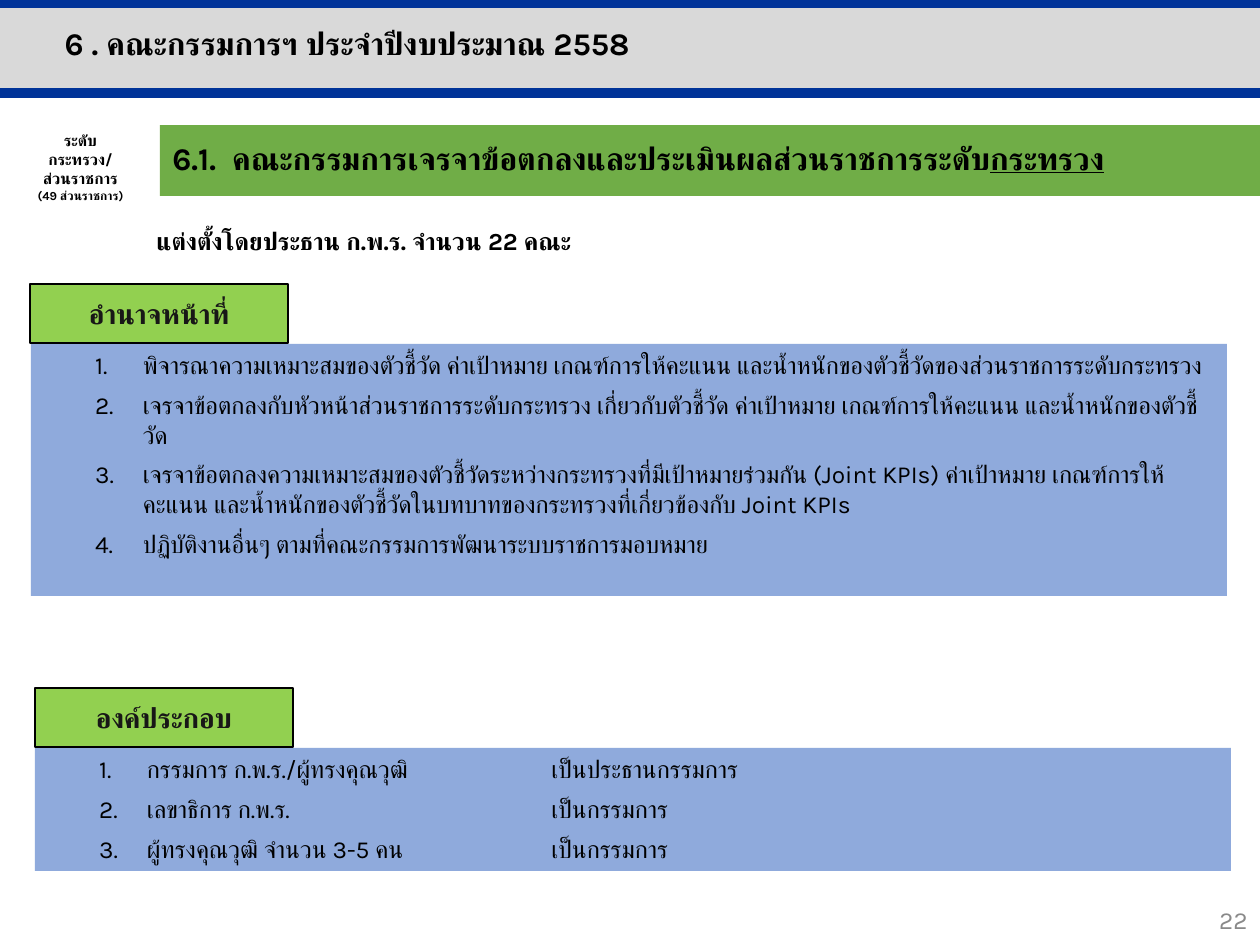
from lxml import etree
from pptx import Presentation
from pptx import util as u
from pptx.dml.color import RGBColor
from pptx.enum import shapes, text
from pptx.oxml.ns import qn

# Content
TITLE = "6 . คณะกรรมการฯ ประจำปีงบประมาณ 2558"
HEADING = "6.1.  คณะกรรมการเจรจาข้อตกลงและประเมินผลส่วนราชการระดับ"
HEADING_UNDERLINED = "กระทรวง"
LEVEL_LINES = ["ระดับ", "กระทรวง/", "ส่วนราชการ", "(49 ส่วนราชการ)"]
APPOINTED = "แต่งตั้งโดยประธาน ก.พ.ร. จำนวน 22 คณะ"
PAGE_NUMBER = "22"
DUTIES = [
    "พิจารณาความเหมาะสมของตัวชี้วัด ค่าเป้าหมาย เกณฑ์การให้คะแนน และน้ำหนักของตัวชี้วัดของส่วนราชการระดับกระทรวง",
    "เจรจาข้อตกลงกับหัวหน้าส่วนราชการระดับกระทรวง เกี่ยวกับตัวชี้วัด ค่าเป้าหมาย เกณฑ์การให้คะแนน และน้ำหนักของตัวชี้วัด",
    "เจรจาข้อตกลงความเหมาะสมของตัวชี้วัดระหว่างกระทรวงที่มีเป้าหมายร่วมกัน (Joint KPIs) ค่าเป้าหมาย "
    "เกณฑ์การให้คะแนน และน้ำหนักของตัวชี้วัดในบทบาทของกระทรวงที่เกี่ยวข้องกับ Joint KPIs",
    "ปฏิบัติงานอื่นๆ ตามที่คณะกรรมการพัฒนาระบบราชการมอบหมาย",
]
MEMBERS = [  # member, tabs, role
    ("กรรมการ ก.พ.ร./ผู้ทรงคุณวุฒิ", 3, "เป็นประธานกรรมการ"),
    ("เลขาธิการ ก.พ.ร.", 5, "เป็นกรรมการ"),
    ("ผู้ทรงคุณวุฒิ จำนวน 3-5 คน", 3, "เป็นกรรมการ"),
]
MEMBER_LINES = [name + "\t" * tabs + role for name, tabs, role in MEMBERS]
SECTIONS = [  # label, label position, panel position, panel height, items
    ("องค์ประกอบ", (35, 688), (35, 748), 123, MEMBER_LINES),
    ("อำนาจหน้าที่", (30, 284), (31, 344), 252, DUTIES),
]

# Style
FONT = "Karla"
BLACK = RGBColor(0x00, 0x00, 0x00)
INK = RGBColor(0x18, 0x17, 0x17)
GREY = RGBColor(0x89, 0x89, 0x89)
BAND = RGBColor(0xD9, 0xD9, 0xD9)
NAVY = RGBColor(0x00, 0x33, 0x99)
GREEN = RGBColor(0x70, 0xAD, 0x47)
LIME = RGBColor(0x92, 0xD0, 0x50)
BLUE = RGBColor(0x8F, 0xAA, 0xDC)
PX = u.Inches(1) / 126
LABEL_SIZE = (258, 59)
PANEL_WIDTH = 1196
LEFT, CENTER, RIGHT = text.PP_ALIGN.LEFT, text.PP_ALIGN.CENTER, text.PP_ALIGN.RIGHT
TOP, MIDDLE = text.MSO_ANCHOR.TOP, text.MSO_ANCHOR.MIDDLE


def px(*lengths):
    return [round(length * PX) for length in lengths]


def add_panel(page, place, fill, outline=None):
    box = page.shapes.add_shape(shapes.MSO_SHAPE.RECTANGLE, *px(*place))
    box.shadow.inherit = False
    box.fill.solid()
    box.fill.fore_color.rgb = fill
    if outline is None:
        box.line.fill.background()
    else:
        box.line.color.rgb = outline
        box.line.width = u.Pt(0.75)
    return box


def add_rule(page, y):
    rule = page.shapes.add_connector(shapes.MSO_CONNECTOR.STRAIGHT, *px(0, y, 1260, y))
    rule.line.color.rgb = NAVY
    rule.line.width = u.Pt(6)
    etree.SubElement(rule._element.spPr, qn("a:effectLst"))


def style_span(span, size, color, bold):
    span.font.size = u.Pt(size)
    span.font.name = FONT
    span.font.bold = bold
    span.font.color.rgb = color
    # Thai letters take the complex-script font
    etree.SubElement(span._r.get_or_add_rPr(), qn("a:cs"), typeface=FONT)


def write(box, lines, size, color=BLACK, bold=True, align=LEFT, anchor=MIDDLE):
    frame = box.text_frame
    frame.word_wrap = True
    frame.auto_size = text.MSO_AUTO_SIZE.NONE
    frame.vertical_anchor = anchor
    frame.text = "\n".join(lines)
    for para in frame.paragraphs:
        para.alignment = align
        for span in para.runs:
            style_span(span, size, color, bold)
    return frame


def number(frame):
    for index, para in enumerate(frame.paragraphs):
        props = para._p.get_or_add_pPr()
        props.set("marL", str(u.Inches(0.79)))
        props.set("indent", str(u.Inches(-0.38)))
        etree.SubElement(props, qn("a:buFont"), typeface="Arial")
        etree.SubElement(props, qn("a:buAutoNum"), type="arabicPeriod")
        if index:
            para.space_before = u.Pt(6)


def add_text(page, place, lines, size, **style):
    return write(page.shapes.add_textbox(*px(*place)), lines, size, **style)


def main():
    deck = Presentation()
    deck.slide_width, deck.slide_height = u.Inches(10), u.Inches(7.5)
    page = deck.slides.add_slide(deck.slide_layouts[5])

    # Title band
    add_panel(page, (0, 6, 1260, 86), BAND)
    for y in (93, 3):
        add_rule(page, y)
    title = page.shapes.title
    title.left, title.top, title.width, title.height = px(52, 18, 1153, 50)
    write(title, [TITLE], 18)
    page.shapes._spTree.append(title._element)  # in front of the band

    # Heading bar
    bar = add_panel(page, (160, 125, 1100, 71), GREEN)
    para = write(bar, [HEADING], 18).paragraphs[0]
    para.line_spacing = 0.9
    span = para.add_run()
    span.text = HEADING_UNDERLINED
    style_span(span, 18, BLACK, True)
    span.font.underline = True

    # Level note and appointment line
    level = add_text(page, (18, 125, 125, 87), LEVEL_LINES, 9, align=CENTER, anchor=TOP)
    level.paragraphs[-1].runs[0].font.size = u.Pt(7)
    add_text(page, (144, 220, 1116, 43), [APPOINTED], 14, anchor=TOP)

    # Numbered panels with their labels
    for label, label_at, panel_at, height, items in SECTIONS:
        panel = add_panel(page, (*panel_at, PANEL_WIDTH, height), BLUE)
        number(write(panel, items, 14, bold=False, anchor=TOP))
        tag = add_panel(page, (*label_at, *LABEL_SIZE), LIME, BLACK)
        write(tag, [label], 16, color=INK, align=CENTER)

    # Page number
    add_text(page, (976, 895, 284, 50), [PAGE_NUMBER], 14, color=GREY, bold=False, align=RIGHT)

    deck.save("out.pptx")


if __name__ == "__main__":
    main()
